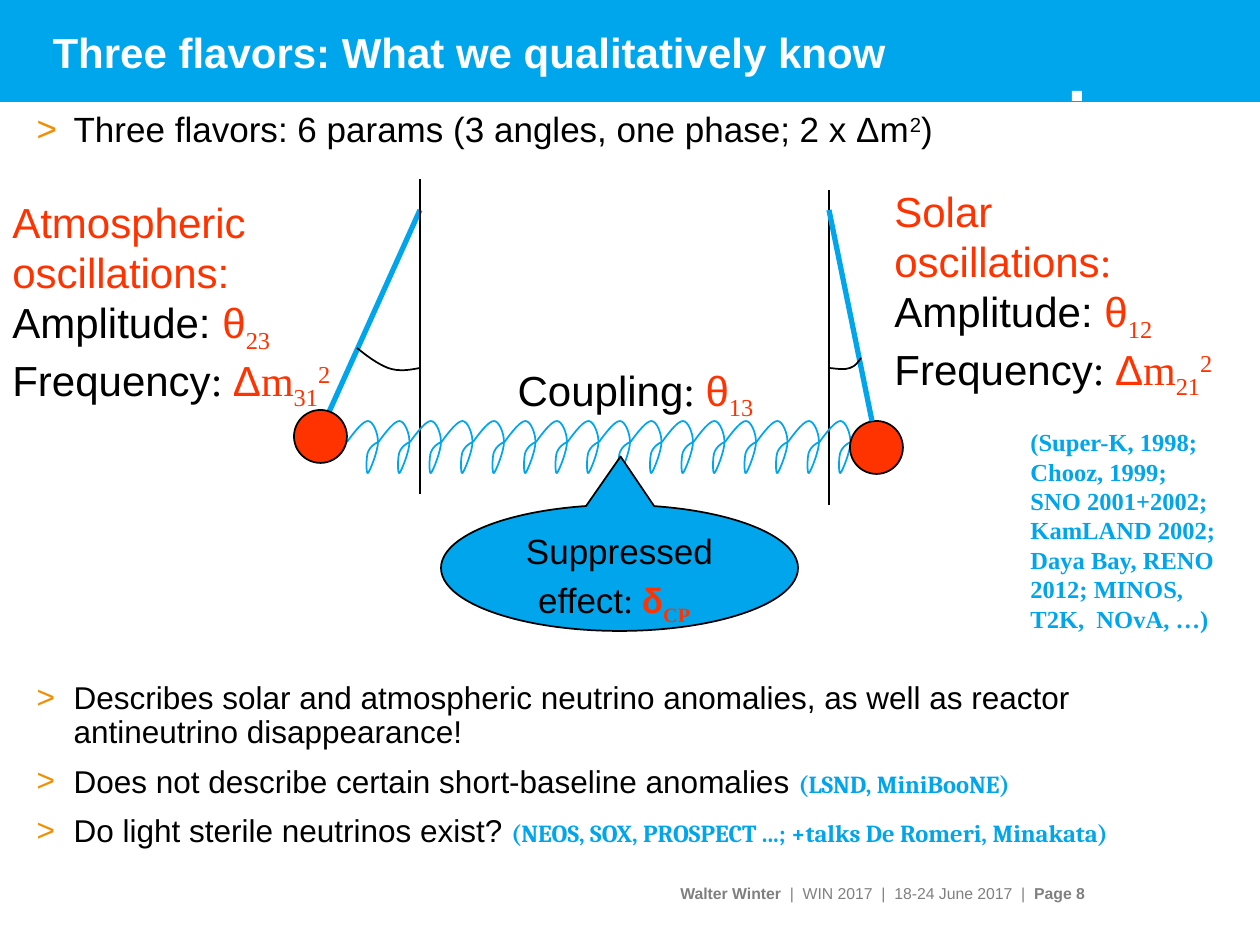
"""Build the slide on three-flavor neutrino oscillations as coupled pendulums."""
from dataclasses import dataclass, field

from lxml.etree import SubElement
from pptx import Presentation
from pptx.dml.color import RGBColor
from pptx.enum.shapes import MSO_CONNECTOR as CONN, MSO_SHAPE as SHAPE
from pptx.enum.text import MSO_ANCHOR as ANCHOR, MSO_AUTO_SIZE as FIT, PP_ALIGN as ALIGN
from pptx.oxml.ns import qn
from pptx.util import Emu, Pt

SCALE = 914400 / 126


def px(n):
    return Emu(round(n * SCALE))


@dataclass
class Theme:
    colors: dict = field(default_factory=lambda: {
        "blue": "00A5EB", "band": "00A6EB", "red": "FF3300", "black": "000000",
        "white": "FFFFFF", "gray": "808080", "orange": "F28E00"})
    styles: dict = field(default_factory=lambda: {
        "huge": {"size": Pt(24)}, "large": {"size": Pt(20)}, "medium": {"size": Pt(18)},
        "note": {"size": Pt(14)}, "small": {"size": Pt(9)},
        "arial": {"name": "Arial"}, "times": {"name": "Times New Roman"},
        "cambria": {"name": "Cambria"}, "bold": {"bold": True}, "plain": {"bold": False}})
    baselines: dict = field(default_factory=lambda: {"sub": "-25000", "sup": "30000"})

    def color(self, name):
        return RGBColor.from_string(self.colors[name])


class SlideBuilder:
    def __init__(self, prs, theme):
        self.theme = theme
        self.slide = prs.slides.add_slide(prs.slide_layouts[1])
        self.shapes = self.slide.shapes

    def place(self, sp, box):
        for name, n in zip(("left", "top", "width", "height"), box):
            setattr(sp, name, px(n))

    def outline(self, sp, color, width):
        sp.line.color.rgb = self.theme.color(color)
        sp.line.width = Pt(width)

    def runs(self, p, base, parts):
        for text, style in parts:
            words = f"arial black plain {base} {style}".split()
            for i, line in enumerate(text.split("\n")):
                if i:
                    p.add_line_break()
                if line:
                    self.run(p, line, words)

    def run(self, p, text, words):
        r = p.add_run()
        r.text = text
        for word in words:
            for name, value in self.theme.styles.get(word, {}).items():
                setattr(r.font, name, value)
            if word in self.theme.colors:
                r.font.color.rgb = self.theme.color(word)
            if word in self.theme.baselines:
                r._r.get_or_add_rPr().set("baseline", self.theme.baselines[word])

    def title(self, box, text):
        sp = self.shapes.title
        self.place(sp, box)
        tf = sp.text_frame
        tf.auto_size, tf.vertical_anchor = FIT.NONE, ANCHOR.MIDDLE
        p = tf.paragraphs[0]
        p.alignment = ALIGN.LEFT
        self.runs(p, "huge white bold", [(text, "")])

    def bullets(self, box, items):
        sp = self.slide.placeholders[1]
        self.place(sp, box)
        tf = sp.text_frame
        tf.auto_size = FIT.NONE
        for i, (base, after, parts) in enumerate(items):
            p = tf.add_paragraph() if i else tf.paragraphs[0]
            pPr = p._p.get_or_add_pPr()
            pPr.set("marL", str(px(37)))
            pPr.set("indent", str(px(-37)))
            SubElement(SubElement(pPr, qn("a:buClr")), qn("a:srgbClr"),
                       val=self.theme.colors["orange"])
            SubElement(pPr, qn("a:buFont"), typeface="Arial")
            SubElement(pPr, qn("a:buChar"), char=">")
            formats = {"line_spacing": 0.9, "space_before": Pt(0), "space_after": Pt(after)}
            for name, value in formats.items():
                setattr(p, name, value)
            self.runs(p, base, parts)

    def text(self, box, base, parts, align=ALIGN.LEFT, **frame):
        tf = self.shapes.add_textbox(*map(px, box)).text_frame
        for name, value in {"word_wrap": True, "auto_size": FIT.SHAPE_TO_FIT_TEXT, **frame}.items():
            setattr(tf, name, value)
        tf.paragraphs[0].alignment = align
        self.runs(tf.paragraphs[0], base, parts)

    def shape(self, kind, box, fill, line=None):
        sp = self.shapes.add_shape(kind, *map(px, box))
        sp.shadow.inherit = False
        sp.fill.solid()
        sp.fill.fore_color.rgb = self.theme.color(fill)
        if line:
            self.outline(sp, line, 1)
        else:
            sp.line.fill.background()
        return sp

    def band(self, box):
        sp = self.shape(SHAPE.RECTANGLE, box, "band")
        self.shapes._spTree.insert(2, sp._element)

    def callout(self, box, tip, base, parts):
        sp = self.shape(SHAPE.OVAL_CALLOUT, box, "blue", "black")
        for i, value in enumerate(tip):
            sp.adjustments[i] = value
        tf = sp.text_frame
        tf.word_wrap, tf.vertical_anchor = True, ANCHOR.TOP
        tf.paragraphs[0].alignment = ALIGN.CENTER
        self.runs(tf.paragraphs[0], base, parts)

    def line(self, ends, color, width):
        cx = self.shapes.add_connector(CONN.STRAIGHT, *map(px, ends))
        self.outline(cx, color, width)
        SubElement(cx._element.spPr, qn("a:effectLst"))

    def curve(self, points, color):
        """Draw cubic Bézier segments through a start point and triples of points."""
        (x, y), *rest = [(px(a), px(b)) for a, b in points]
        fb = self.shapes.build_freeform(x, y)
        fb.add_line_segments(rest, close=False)
        sp = fb.convert_to_shape()
        sp.shadow.inherit = False
        sp.fill.background()
        self.outline(sp, color, 1)
        path = sp._element.find(".//" + qn("a:path"))
        legs = path.findall(qn("a:lnTo"))
        for i in range(0, len(legs), 3):
            bezier = SubElement(path, qn("a:cubicBezTo"))
            for leg in legs[i:i + 3]:
                bezier.append(leg[0])
                path.remove(leg)


COIL = [(0, 442), (8, 431), (16, 421), (21, 421), (26, 421), (31, 433), (31, 442), (31, 451),
        (23, 471), (21, 473), (19, 475), (19, 457), (21, 452), (23, 447), (27, 444), (31, 442)]
LEFT_ARC = [(357, 348), (368, 357), (378, 364), (388, 368), (399, 372), (410, 370), (420, 368)]
RIGHT_ARC = [(829, 368), (838, 369), (845, 370), (850, 368), (856, 366), (858, 362), (861, 358)]
BULLETS = [
    ("large", 304, [("Three flavors: 6 params (3 angles, one phase; 2 x Δm", ""),
                    ("2", "sup"), (")", "")]),
    ("medium", 9, [("Describes solar and atmospheric neutrino anomalies, as well as reactor "
                    "antineutrino disappearance!", "")]),
    ("medium", 9, [("Does not describe certain short-baseline anomalies ", ""),
                   ("(LSND, MiniBooNE)", "note cambria blue bold")]),
    ("medium", 9, [("Do light sterile neutrinos exist? ", ""),
                   ("(NEOS, SOX, PROSPECT ...; +talks De Romeri, Minakata)",
                    "note cambria blue bold")])]


def oscillation(heading, angle, mass):
    return heading + [
        ("Amplitude: ", ""), ("θ", "red"), (angle + "\n", "red times sub"),
        ("Frequency", ""), (": ", "times"), ("Δ", "red"), ("m", "red times"),
        (mass, "red times sub"), ("2", "red times sup")]


def main():
    prs = Presentation()
    prs.slide_width, prs.slide_height = px(1260), px(945)
    s = SlideBuilder(prs, Theme())
    s.band((0, 0, 1260, 102))
    s.text((39, 866, 1046, 55), "small gray",
           [("Walter Winter ", "bold"), (" |  WIN 2017  |  18-24 June 2017  |  ", ""),
            ("Page 8", "bold")],
           ALIGN.RIGHT, auto_size=FIT.NONE, vertical_anchor=ANCHOR.MIDDLE, margin_right=0)
    s.bullets((24, 106, 1207, 787), BULLETS)
    s.title((40, 14, 1174, 76), "Three flavors: What we qualitatively know")

    s.line((829, 190, 829, 505), "black", 1)
    s.line((325, 421, 420, 210), "blue", 3)
    s.line((420, 179, 420, 494), "black", 1)
    s.curve(LEFT_ARC, "black")
    for i in range(16):
        s.curve([(347 + 31.5 * i + x, y) for x, y in COIL], "blue")
    s.shape(SHAPE.OVAL, (850, 421, 53, 53), "red", "black")
    s.line((872, 421, 829, 210), "blue", 3)
    s.curve(RIGHT_ARC, "black")

    s.text((420, 358, 431, 63), "huge",
           [("Coupling", ""), (": ", "times"), ("θ", "red"), ("13", "red times sub")],
           ALIGN.CENTER)
    s.text((0, 190, 368, 214), "huge",
           oscillation([("Atmospheric\noscillations:\n", "red")], "23", "31"))
    s.text((882, 179, 357, 214), "huge",
           oscillation([("Solar\noscillations", "red"), (":\n", "red times")], "12", "21"))
    s.callout((441, 505, 357, 126), (0.003, -0.885), "large",
              [("Suppressed effect", ""), (": ", "times"), ("δ", "red bold"),
               ("CP", "red bold times sub"), (" ", "huge bold times")])
    s.text((1018, 421, 221, 221), "note times blue bold",
           [("(Super-K, 1998;\nChooz, 1999; \nSNO 2001+2002; \nKamLAND 2002;\n"
             "Daya Bay, RENO 2012; MINOS, T2K,  NOvA, …)", "")])
    s.shape(SHAPE.OVAL, (294, 410, 53, 53), "red", "black")
    s.shape(SHAPE.RECTANGLE, (1072, 91, 10, 10), "white")
    prs.save("out.pptx")


if __name__ == "__main__":
    main()
